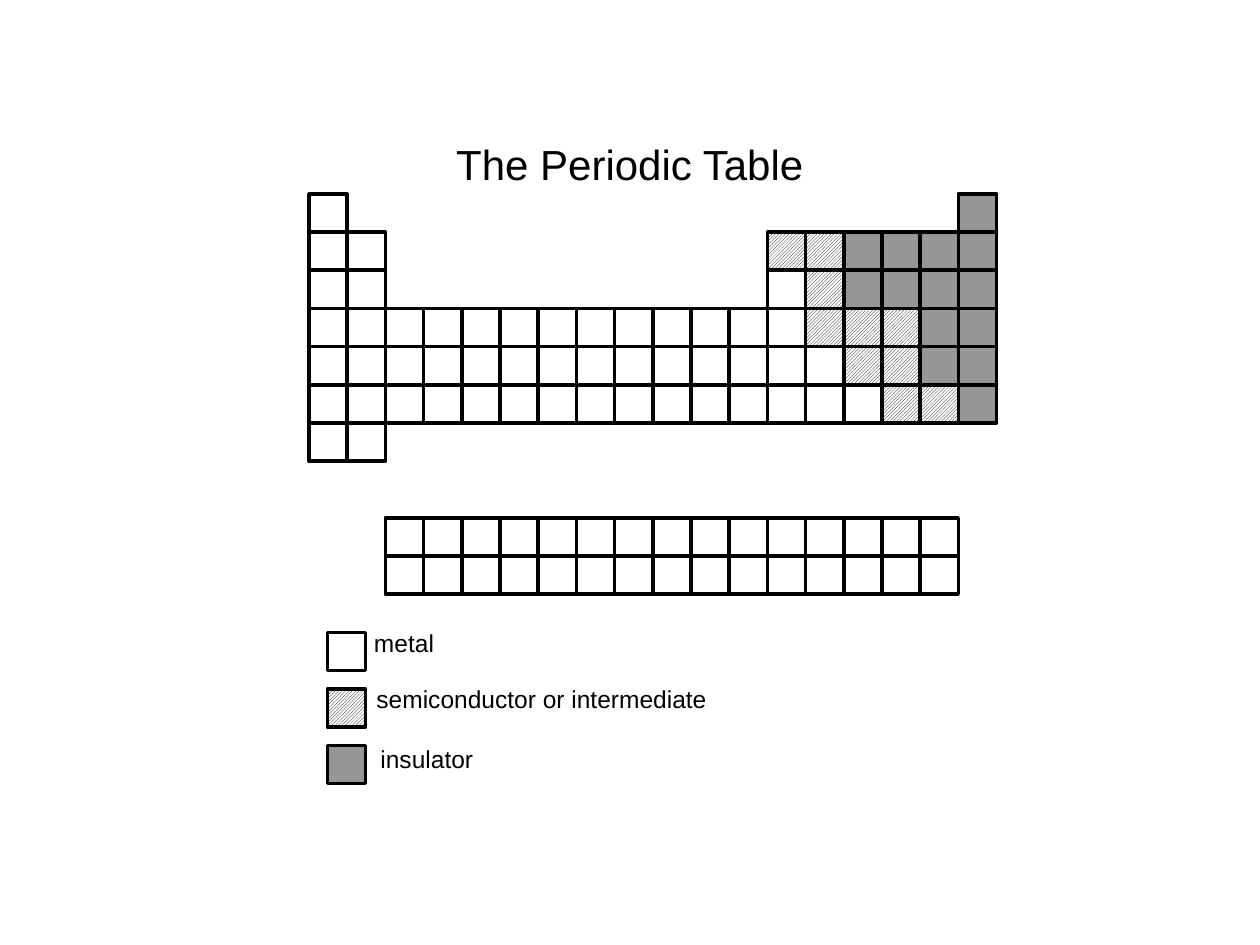
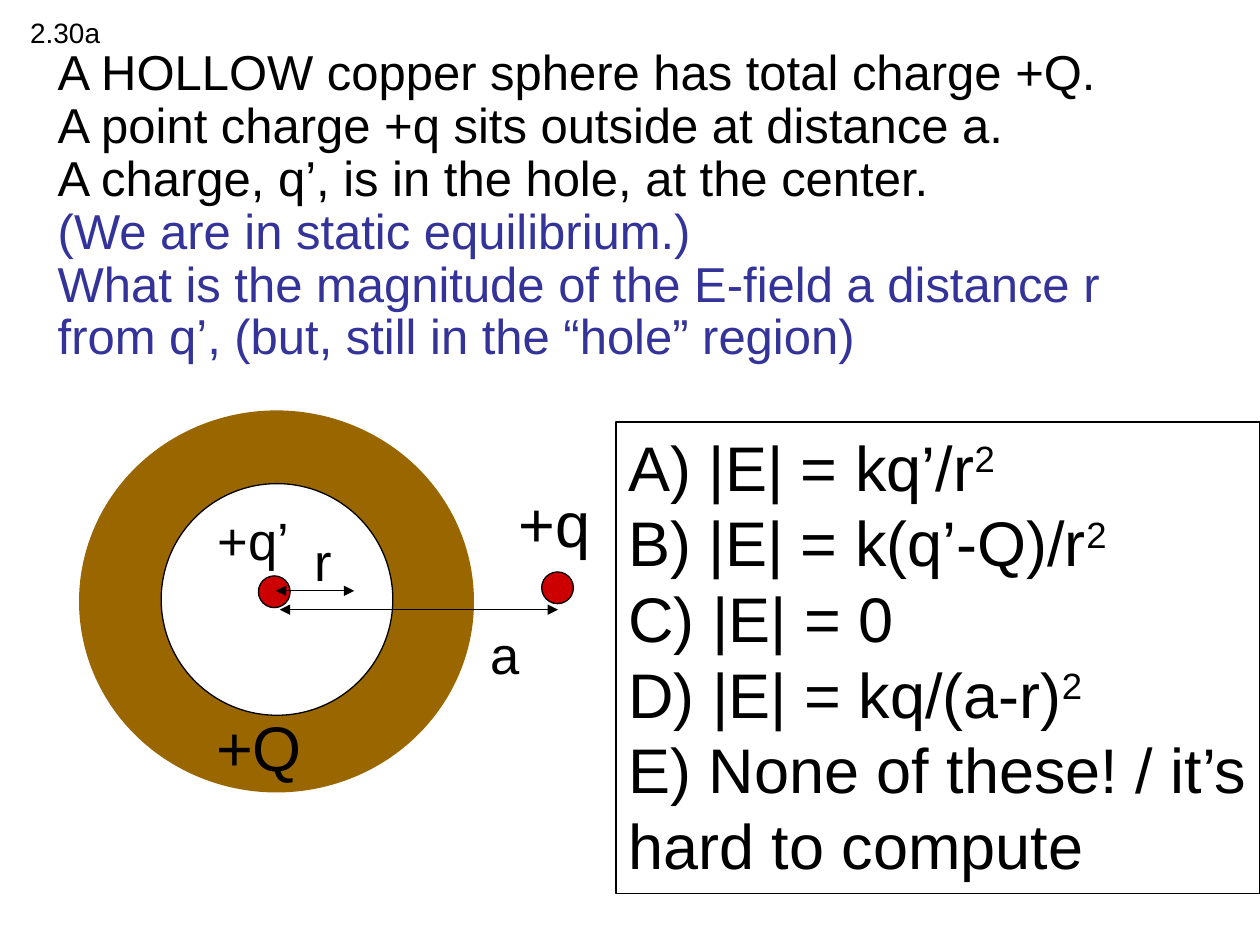
from dataclasses import dataclass
from typing import Any, NamedTuple, Optional

from lxml.etree import SubElement
from pptx import Presentation
from pptx.dml.color import RGBColor
from pptx.enum.dml import MSO_PATTERN
from pptx.enum.shapes import MSO_CONNECTOR, MSO_SHAPE
from pptx.enum.text import MSO_ANCHOR, MSO_AUTO_SIZE, PP_ALIGN
from pptx.oxml.ns import qn
from pptx.util import Cm, Pt


# Theme: every colour and type size
@dataclass(frozen=True)
class Theme:
    font: str = "Arial"
    black: RGBColor = RGBColor(0x00, 0x00, 0x00)
    white: RGBColor = RGBColor(0xFF, 0xFF, 0xFF)
    grey: RGBColor = RGBColor(0x96, 0x96, 0x96)
    blue: RGBColor = RGBColor(0x33, 0x33, 0x99)
    copper: RGBColor = RGBColor(0x99, 0x66, 0x00)
    red: RGBColor = RGBColor(0xCC, 0x00, 0x00)
    title: int = 24
    legend: int = 14
    question: int = 28
    answer: int = 36
    charge: int = 36
    symbol: int = 30
    number: int = 16
    cell_line: float = 2
    thin_line: float = 0.75
    ring_line: float = 6


THEME = Theme()


# Repeated elements, with lengths in centimetres
class Box(NamedTuple):
    left: float
    top: float
    width: float
    height: float

    def lengths(self) -> tuple:
        return tuple(Cm(value) for value in self)


class LegendEntry(NamedTuple):
    kind: str
    text: str
    box: Box


class Disk(NamedTuple):
    box: Box
    fill: RGBColor
    line: RGBColor = THEME.black
    weight: float = THEME.thin_line


class Label(NamedTuple):
    text: str
    box: Box
    size: int


class Arrow(NamedTuple):
    start: float
    end: float
    height: float


class Answer(NamedTuple):
    text: str
    exponent: str = ""


# Periodic table: m metal, s semiconductor, i insulator, dot for a gap
CELL = 0.77
TABLE_LEFT = 6.23
MAIN_TOP, LOWER_TOP = 3.91, 10.44
MAIN_ROWS = [
    "m" + "." * 16 + "i",
    "mm" + "." * 10 + "ss" + "iiii",
    "mm" + "." * 10 + "ms" + "iiii",
    "m" * 13 + "sss" + "ii",
    "m" * 14 + "ss" + "ii",
    "m" * 15 + "ss" + "i",
    "mm",
]
LOWER_ROWS = [".." + "m" * 15] * 2

LEGEND_LEFT, LEGEND_TOP, LEGEND_STEP = 6.6, 12.75, 1.14
LEGEND = [
    LegendEntry("m", "metal", Box(7.54, 12.67, 2.69, 1.22)),
    LegendEntry("s", "semiconductor or intermediate", Box(7.59, 13.79, 10.74, 1.09)),
    LegendEntry("i", "insulator", Box(7.67, 14.99, 4.62, 1.02)),
]

# Sphere question
QUESTION = [
    ("A HOLLOW copper sphere has total charge +Q.", THEME.black),
    ("A point charge +q sits outside at distance a.", THEME.black),
    ("A charge, q’, is in the hole, at the center.", THEME.black),
    ("(We are in static equilibrium.)", THEME.blue),
    ("What is the magnitude of the E-field a distance r from q’, "
     "(but, still in the “hole” region)", THEME.blue),
]
ANSWERS = [
    Answer("A) |E| = kq’/r", "2"),
    Answer("B) |E| = k(q’-Q)/r", "2"),
    Answer("C) |E| = 0"),
    Answer("D) |E| = kq/(a-r)", "2"),
    Answer("E) None of these! / it’s hard to compute"),
]
DOT = 0.64
DISKS = [
    Disk(Box(1.7, 8.38, 7.75, 7.49), THEME.copper, THEME.copper, THEME.ring_line),
    Disk(Box(3.25, 9.75, 4.67, 4.67), THEME.white),
    Disk(Box(10.92, 11.53, DOT, DOT), THEME.red),
    Disk(Box(5.21, 11.61, DOT, DOT), THEME.red),
]
LABELS = [
    Label("2.30a", Box(0.36, 0.18, 1.93, 0.94), THEME.number),
    Label("+q", Box(10.21, 9.65, 1.96, 1.78), THEME.charge),
    Label("+Q", Box(4.11, 14.15, 2.24, 1.78), THEME.charge),
    Label("+q’", Box(4.14, 10.11, 1.96, 1.52), THEME.symbol),
    Label("r", Box(6.1, 10.54, 0.84, 1.52), THEME.symbol),
    Label("a", Box(9.63, 12.42, 0.84, 1.55), THEME.symbol),
]
ARROWS = [Arrow(5.56, 7.14, 11.91), Arrow(5.64, 11.25, 12.29)]


# Helpers
def apply_format(target: Any, formats: dict) -> None:
    for name, value in formats.items():
        setattr(target, name, value)


def add_span(para: Any, text: str, size: int, color: RGBColor = THEME.black) -> Any:
    span = para.add_run()
    span.text = text
    apply_format(span.font, {"name": THEME.font, "size": Pt(size)})
    span.font.color.rgb = color
    return span


def next_para(frame: Any, index: int) -> Any:
    return frame.paragraphs[0] if index == 0 else frame.add_paragraph()


def place(shape: Any, box: Box) -> None:
    apply_format(shape, dict(zip(("left", "top", "width", "height"), box.lengths())))


def set_line(shape: Any, color: RGBColor, weight: float) -> None:
    shape.line.color.rgb = color
    shape.line.width = Pt(weight)


def add_text(shapes: Any, label: Label, formats: Optional[dict] = None) -> None:
    frame = shapes.add_textbox(*label.box.lengths()).text_frame
    apply_format(frame, formats or {
        "word_wrap": False, "auto_size": MSO_AUTO_SIZE.SHAPE_TO_FIT_TEXT})
    add_span(frame.paragraphs[0], label.text, label.size)


def add_cell(shapes: Any, kind: str, left: float, top: float) -> None:
    cell = shapes.add_shape(MSO_SHAPE.RECTANGLE, *Box(left, top, CELL, CELL).lengths())
    cell.shadow.inherit = False
    set_line(cell, THEME.black, THEME.cell_line)
    if kind == "s":
        cell.fill.patterned()
        cell.fill.pattern = MSO_PATTERN.LIGHT_UPWARD_DIAGONAL
        cell.fill.fore_color.rgb = THEME.black
        cell.fill.back_color.rgb = THEME.white
    else:
        cell.fill.solid()
        cell.fill.fore_color.rgb = THEME.grey if kind == "i" else THEME.white


def add_cell_rows(shapes: Any, rows: list[str], top: float) -> None:
    for row, kinds in enumerate(rows):
        for column, kind in enumerate(kinds):
            if kind != ".":
                add_cell(shapes, kind, TABLE_LEFT + column * CELL, top + row * CELL)


def add_disk(shapes: Any, disk: Disk) -> None:
    oval = shapes.add_shape(MSO_SHAPE.OVAL, *disk.box.lengths())
    oval.shadow.inherit = False
    oval.fill.solid()
    oval.fill.fore_color.rgb = disk.fill
    set_line(oval, disk.line, disk.weight)


def add_arrow(shapes: Any, arrow: Arrow) -> None:
    height = Cm(arrow.height)
    line = shapes.add_connector(
        MSO_CONNECTOR.STRAIGHT, Cm(arrow.start), height, Cm(arrow.end), height)
    set_line(line, THEME.black, THEME.thin_line)
    for end in ("a:headEnd", "a:tailEnd"):
        SubElement(line.line._get_or_add_ln(), qn(end), type="triangle")
    SubElement(line._element.spPr, qn("a:effectLst"))


# Slides
def build_periodic_table(deck: Any) -> None:
    page = deck.slides.add_slide(deck.slide_layouts.get_by_name("Title Only"))
    title = page.shapes.title
    place(title, Box(1.9, 1.7, 21.59, 3.18))
    title.text_frame.vertical_anchor = MSO_ANCHOR.MIDDLE
    para = title.text_frame.paragraphs[0]
    para.alignment = PP_ALIGN.CENTER
    add_span(para, "The Periodic Table", THEME.title)

    shapes = page.shapes.add_group_shape().shapes
    add_cell_rows(shapes, MAIN_ROWS, MAIN_TOP)
    add_cell_rows(shapes, LOWER_ROWS, LOWER_TOP)

    margins = {f"margin_{side}": 0 for side in ("left", "top", "right", "bottom")}
    for index, entry in enumerate(LEGEND):
        add_cell(shapes, entry.kind, LEGEND_LEFT, LEGEND_TOP + index * LEGEND_STEP)
        add_text(shapes, Label(entry.text, entry.box, THEME.legend),
                 {"word_wrap": True, **margins})


def fill_question(body: Any) -> None:
    place(body, Box(0.91, 0.84, 22.73, 6.76))
    frame = body.text_frame
    apply_format(frame, {"auto_size": MSO_AUTO_SIZE.NONE, "vertical_anchor": MSO_ANCHOR.TOP})
    for index, (text, color) in enumerate(QUESTION):
        para = next_para(frame, index)
        apply_format(para, {"line_spacing": 0.9, "space_before": Pt(0)})
        properties = para._p.get_or_add_pPr()
        for name in ("marL", "indent"):
            properties.set(name, "0")
        SubElement(properties, qn("a:buNone"))
        add_span(para, text, THEME.question, color)


def add_answers(shapes: Any) -> None:
    panel = shapes.add_textbox(*Box(12.42, 8.51, 12.98, 9.5).lengths())
    set_line(panel, THEME.black, THEME.thin_line)
    frame = panel.text_frame
    apply_format(frame, {"word_wrap": True, "auto_size": MSO_AUTO_SIZE.SHAPE_TO_FIT_TEXT})
    for index, answer in enumerate(ANSWERS):
        para = next_para(frame, index)
        add_span(para, answer.text, THEME.answer)
        if answer.exponent:
            span = add_span(para, answer.exponent, THEME.answer)
            span._r.get_or_add_rPr().set("baseline", "30000")


def build_sphere_question(deck: Any) -> None:
    page = deck.slides.add_slide(deck.slide_layouts.get_by_name("Title and Content"))
    heading = page.shapes.title._element
    heading.getparent().remove(heading)
    fill_question(page.placeholders[1])
    for disk in DISKS:
        add_disk(page.shapes, disk)
    add_answers(page.shapes)
    for arrow in ARROWS:
        add_arrow(page.shapes, arrow)
    for label in LABELS:
        add_text(page.shapes, label)


def main() -> None:
    deck = Presentation()
    apply_format(deck, {"slide_width": Cm(25.4), "slide_height": Cm(19.05)})
    build_periodic_table(deck)
    build_sphere_question(deck)
    deck.save("out.pptx")


if __name__ == "__main__":
    main()
